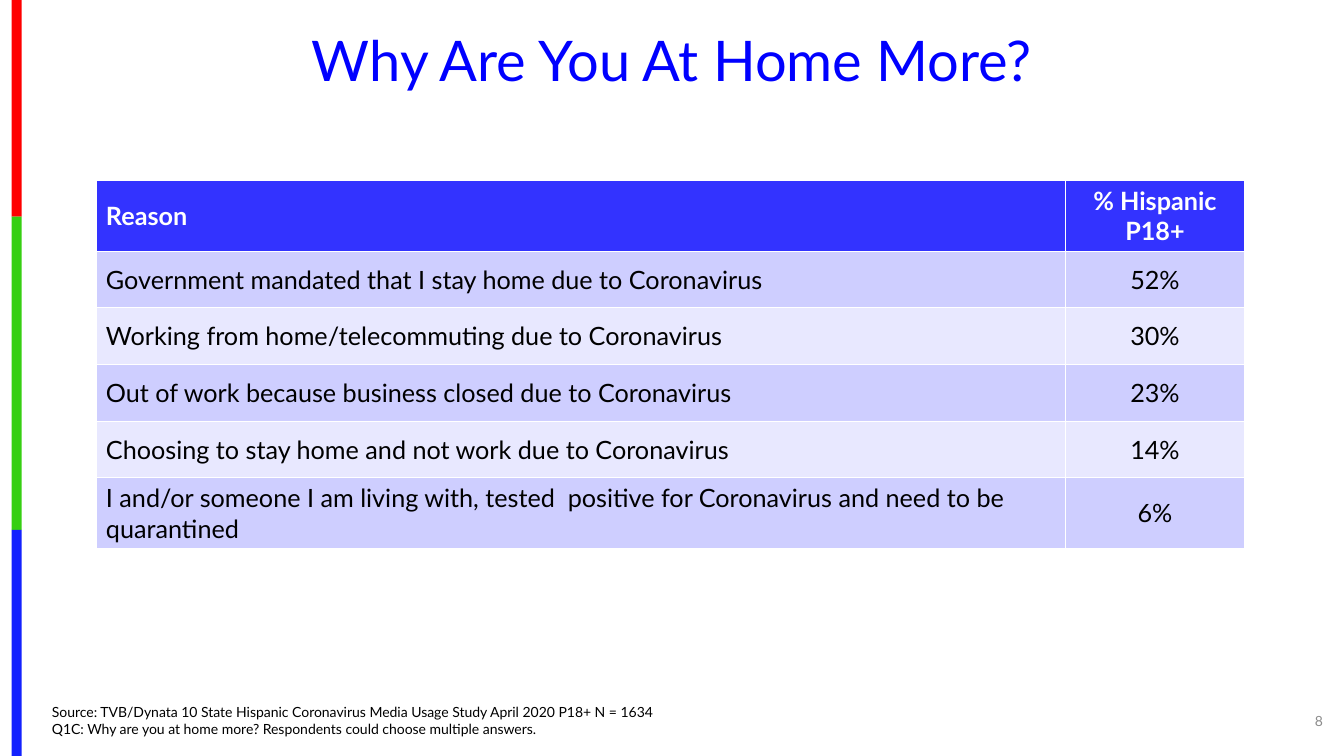
from pptx import Presentation
from pptx.dml.color import RGBColor
from pptx.enum import shapes, text
from pptx.util import Pt

FONT = "Lato"
REASONS = [
    ("Reason", "% Hispanic P18+"),
    ("Government mandated that I stay home due to Coronavirus", "52%"),
    ("Working from home/telecommuting due to Coronavirus", "30%"),
    ("Out of work because business closed due to Coronavirus", "23%"),
    ("Choosing to stay home and not work due to Coronavirus", "14%"),
    ("I and/or someone I am living with, tested  positive for Coronavirus "
     "and need to be quarantined", "6%"),
]
SOURCE = ("Source: TVB/Dynata 10 State Hispanic Coronavirus Media Usage Study April 2020 P18+ N = 1634\n"
          "Q1C: Why are you at home more? Respondents could choose multiple answers.")


def rgb(value):
    return RGBColor.from_string(value)


def style_text(tf, size, color, align, bold=False, spacing=None):
    for p in tf.paragraphs:
        p.alignment = align
        p.line_spacing = spacing
        for r in p.runs:
            r.font.name = FONT
            r.font.size = Pt(size)
            r.font.bold = bold
            r.font.color.rgb = rgb(color)


def add_text(s, box, content, size, color, align, anchor, spacing=None):
    tf = s.shapes.add_textbox(*map(Pt, box)).text_frame
    tf.word_wrap = True
    tf.vertical_anchor = anchor
    tf.text = content
    style_text(tf, size, color, align, spacing=spacing)


def add_side_stripe(s, box):
    left, top, width, height = box
    bounds = [0, 154.8, 378.5, height]
    for start, end, color in zip(bounds, bounds[1:], ["FE0000", "36CF12", "1322FE"]):
        sp = s.shapes.add_shape(shapes.MSO_SHAPE.RECTANGLE, Pt(left), Pt(top + start),
                                Pt(width), Pt(end - start))
        sp.shadow.inherit = False
        sp.fill.solid()
        sp.fill.fore_color.rgb = rgb(color)
        sp.line.fill.background()


def add_reason_table(s, box):
    left, top, width, row_height = box
    percent_width = 128
    table = s.shapes.add_table(len(REASONS), 2, Pt(left), Pt(top), Pt(width),
                               Pt(row_height * len(REASONS))).table
    table.columns[0].width = Pt(width - percent_width)
    table.columns[1].width = Pt(percent_width)
    for i, row in enumerate(REASONS):
        header = i == 0
        fill = "3333FF" if header else ("E8E8FF", "CECEFF")[i % 2]
        for j, value in enumerate(row):
            cell = table.cell(i, j)
            cell.fill.solid()
            cell.fill.fore_color.rgb = rgb(fill)
            cell.vertical_anchor = text.MSO_ANCHOR.MIDDLE
            cell.text_frame.text = value
            style_text(cell.text_frame, 18, "FFFFFF" if header else "000000",
                       text.PP_ALIGN.CENTER if j else text.PP_ALIGN.LEFT, bold=header)


def add_footer(s, box):
    left, top, width, height = box
    number_width = 43
    add_text(s, (left, top, 680, height), SOURCE, 10, "000000",
             text.PP_ALIGN.LEFT, text.MSO_ANCHOR.BOTTOM)
    add_text(s, (left + width - number_width, top + 2.5, number_width, 28.5), "8", 10, "8C8C8C",
             text.PP_ALIGN.RIGHT, text.MSO_ANCHOR.MIDDLE)


def main():
    prs = Presentation()
    prs.slide_width, prs.slide_height = Pt(960), Pt(540)
    s = prs.slides.add_slide(prs.slide_layouts[6])
    add_side_stripe(s, (8.4, 0, 7.2, 540))
    add_text(s, (30, 20, 900, 51), "Why Are You At Home More?", 40, "0000FF",
             text.PP_ALIGN.CENTER, text.MSO_ANCHOR.TOP, spacing=0.9)
    add_reason_table(s, (68.5, 129, 820.5, 40.5))
    add_footer(s, (30, 498, 922, 32))
    prs.save("out.pptx")


if __name__ == "__main__":
    main()
